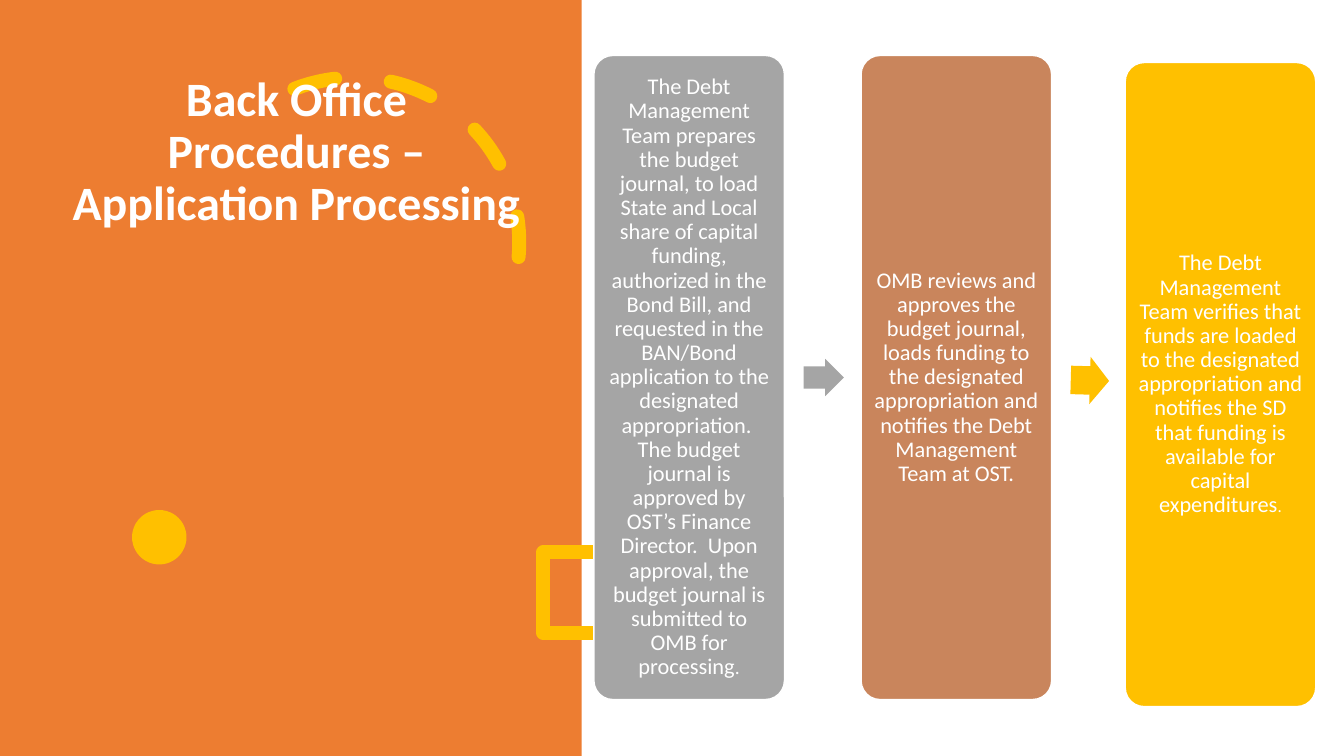
from lxml.etree import SubElement
from pptx import Presentation
from pptx.dml.color import RGBColor
from pptx.enum.dml import MSO_LINE
from pptx.enum.shapes import MSO_SHAPE
from pptx.enum.text import MSO_ANCHOR, PP_ALIGN
from pptx.oxml.ns import qn
from pptx.util import Emu, Pt

PX = 9144
ORANGE = RGBColor(0xED, 0x7D, 0x31)
GOLD = RGBColor(0xFF, 0xC0, 0x00)
GRAY = RGBColor(0xA5, 0xA5, 0xA5)
COPPER = RGBColor(0xC9, 0x85, 0x5C)
WHITE = RGBColor(0xFF, 0xFF, 0xFF)

TITLE = "Back Office Procedures – Application Processing"
CARDS = [
    (589, 55, GRAY, [
        ("The Debt Management Team prepares the budget journal, to load State "
         "and Local share of capital funding, authorized in the Bond Bill, and "
         "requested in the BAN/Bond application to the designated "
         "appropriation.  The budget journal is approved by OST’s Finance "
         "Director.  Upon approval, the budget journal is submitted to OMB for "
         "processing", 16), (".", 14)]),
    (854, 55, COPPER, [
        ("OMB reviews and approves the budget journal, loads funding to the "
         "designated appropriation and notifies the Debt Management Team at "
         "OST.", 16)]),
    (1116, 62, GOLD, [
        ("The Debt Management Team verifies that funds are loaded to the "
         "designated appropriation and notifies the SD that funding is "
         "available for capital expenditures", 16), (".", 12)]),
]
ARROWS = [((797, 356, 40, 37), GRAY, 0), ((1062, 354, 38, 47), GOLD, 1.6)]


class SlideBuilder:
    """Draws styled elements on the current slide."""

    font = {"name": "Calibri"}
    paragraph = {"alignment": PP_ALIGN.CENTER, "line_spacing": 0.9}

    def __init__(self, prs):
        self.s = prs.slides.add_slide(prs.slide_layouts[6])

    def apply(self, target, values):
        for name, value in values.items():
            setattr(target, name, value)

    def box(self, box):
        return [Emu(v * PX) for v in box]

    def shape(self, kind, box, fill=None, line=None, weight=1, adj=(), rotation=0):
        sp = self.s.shapes.add_shape(kind, *self.box(box))
        sp.shadow.inherit = False
        sp.rotation = rotation
        for i, value in enumerate(adj):
            sp.adjustments[i] = value
        for part, color in ((sp.fill, fill), (sp.line.fill, line)):
            if color is None:
                part.background()
            else:
                part.solid()
                part.fore_color.rgb = color
        if line is not None:
            sp.line.width = Pt(weight)
        return sp

    def stroke(self, kind, box, dash=None, **options):
        sp = self.shape(kind, box, line=GOLD, weight=10, **options)
        if dash is not None:
            sp.line.dash_style = dash
        ln = sp.line._get_or_add_ln()
        ln.set("cap", "rnd")
        SubElement(ln, qn("a:round"))

    def text(self, sp, runs, anchor, inset=0, bold=False):
        tf = sp.text_frame
        sides = ("left", "top", "right", "bottom")
        self.apply(tf, {f"margin_{side}": Emu(inset * PX) for side in sides})
        self.apply(tf, {"word_wrap": True, "vertical_anchor": anchor})
        p = tf.paragraphs[0]
        self.apply(p, self.paragraph)
        for words, size in runs:
            r = p.add_run()
            r.text = words
            self.apply(r.font, {**self.font, "size": Pt(size), "bold": bold})
            r.font.color.rgb = WHITE

    def title(self, words, box):
        sp = self.s.shapes.add_textbox(*self.box(box))
        self.text(sp, [(words, 34.2)], MSO_ANCHOR.TOP, bold=True)

    def card(self, left, top, fill, runs):
        sp = self.shape(MSO_SHAPE.ROUNDED_RECTANGLE, (left, top, 189, 639),
                        fill, WHITE, adj=(0.1,))
        self.text(sp, runs, MSO_ANCHOR.MIDDLE, inset=7)

    def arrow(self, box, fill, rotation):
        self.shape(MSO_SHAPE.RIGHT_ARROW, box, fill, adj=(0.6, 0.5), rotation=rotation)


def main():
    prs = Presentation()
    prs.slide_width, prs.slide_height = Emu(1333 * PX), Emu(750 * PX)
    b = SlideBuilder(prs)
    b.shape(MSO_SHAPE.RECTANGLE, (0, 0, 577, 750), ORANGE)
    b.stroke(MSO_SHAPE.ARC, (188, 77, 327, 327), MSO_LINE.DASH,
             adj=(146.13, 0), rotation=5.1)
    b.title(TITLE, (70, 75, 448, 210))
    b.shape(MSO_SHAPE.OVAL, (131, 506, 54, 54), GOLD)
    b.stroke(MSO_SHAPE.RECTANGLE, (539, 548, 80, 80))
    for card in CARDS:
        b.card(*card)
    for arrow in ARROWS:
        b.arrow(*arrow)
    prs.save("out.pptx")


if __name__ == "__main__":
    main()
